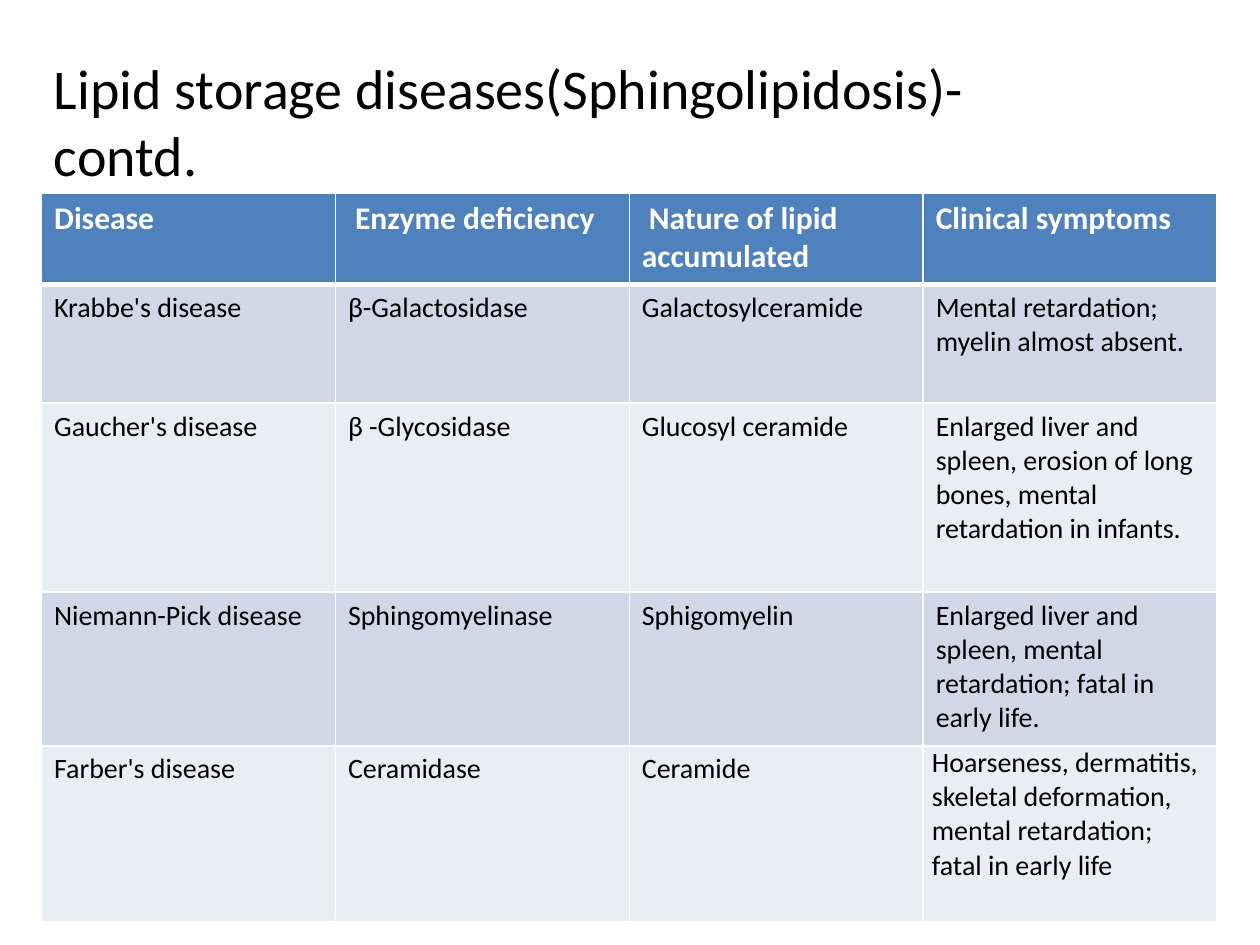
import pptx
import pptx.dml.color
import pptx.enum.text
import pptx.oxml.ns
import pptx.util
from lxml import etree

Inches = pptx.util.Inches
Pt = pptx.util.Pt
RGBColor = pptx.dml.color.RGBColor

WHITE = RGBColor(0xFF, 0xFF, 0xFF)
BLACK = RGBColor(0, 0, 0)
HEADER_BLUE = RGBColor(0x4F, 0x81, 0xBD)
BANDS = [RGBColor(0xD0, 0xD8, 0xE8), RGBColor(0xE9, 0xED, 0xF4)]
FONT = "Calibri"

TITLE = "Lipid storage diseases(Sphingolipidosis)- contd."
DISEASES = [
    ("Disease", " Enzyme deficiency", " Nature of lipid accumulated", "Clinical symptoms"),
    ("Krabbe's disease", "β-Galactosidase", "Galactosylceramide",
     "Mental retardation; myelin almost absent."),
    ("Gaucher's disease", "β -Glycosidase", "Glucosyl ceramide",
     "Enlarged liver and spleen, erosion of long bones, mental retardation in infants."),
    ("Niemann-Pick disease", "Sphingomyelinase", "Sphigomyelin",
     "Enlarged liver and spleen, mental retardation; fatal in early life."),
    ("Farber's disease", "Ceramidase", "Ceramide",
     "Hoarseness, dermatitis, skeletal deformation, mental retardation; fatal in early life"),
]
ROW_HEIGHTS = [0.73, 0.94, 1.5, 1.22, 1.4]
TABLE_LEFT, TABLE_TOP, TABLE_WIDTH = 0.33, 1.53, 9.33
LAST_CELL_MARGINS = {"margin_left": 0.07, "margin_top": 0,
                     "margin_right": 0.07, "margin_bottom": 0}


def write(frame, text, size, color, bold=False):
    paragraph = frame.paragraphs[0]
    run = paragraph.add_run()
    run.text = text
    for name, value in {"name": FONT, "size": Pt(size), "bold": bold}.items():
        setattr(run.font, name, value)
    run.font.color.rgb = color


def add_borders(cell, widths):
    """Draw white cell borders; widths maps side letter to points."""
    properties = cell._tc.get_or_add_tcPr()
    for side, width in widths.items():
        line = etree.SubElement(properties, pptx.oxml.ns.qn("a:ln" + side), w=str(Pt(width)))
        fill = etree.SubElement(line, pptx.oxml.ns.qn("a:solidFill"))
        etree.SubElement(fill, pptx.oxml.ns.qn("a:srgbClr"), val=str(WHITE))


def add_title(slide):
    title = slide.shapes.add_textbox(Inches(0.33), Inches(0.42), Inches(8.5), Inches(1.08))
    title.text_frame.word_wrap = True
    title.text_frame.vertical_anchor = pptx.enum.text.MSO_ANCHOR.MIDDLE
    write(title.text_frame, TITLE, 32, BLACK)


def add_disease_table(slide):
    columns = len(DISEASES[0])
    table = slide.shapes.add_table(
        len(DISEASES), columns, Inches(TABLE_LEFT), Inches(TABLE_TOP),
        Inches(TABLE_WIDTH), Inches(sum(ROW_HEIGHTS))).table
    for column in table.columns:
        column.width = Inches(TABLE_WIDTH / columns)
    for r, (texts, height) in enumerate(zip(DISEASES, ROW_HEIGHTS)):
        table.rows[r].height = Inches(height)
        header = r == 0
        borders = {"L": 1, "R": 1, "T": 3 if r == 1 else 1, "B": 3 if header else 1}
        for c, text in enumerate(texts):
            cell = table.cell(r, c)
            add_borders(cell, borders)
            cell.fill.solid()
            cell.fill.fore_color.rgb = HEADER_BLUE if header else BANDS[(r - 1) % 2]
            write(cell.text_frame, text, 18 if header else 16,
                  WHITE if header else BLACK, header)
    last_cell = table.cell(len(DISEASES) - 1, columns - 1)
    for name, value in LAST_CELL_MARGINS.items():
        setattr(last_cell, name, Inches(value))


def main():
    deck = pptx.Presentation()
    deck.slide_width, deck.slide_height = Inches(10), Inches(7.5)
    slide = deck.slides.add_slide(deck.slide_layouts[6])
    add_title(slide)
    add_disease_table(slide)
    deck.save("out.pptx")


if __name__ == "__main__":
    main()
